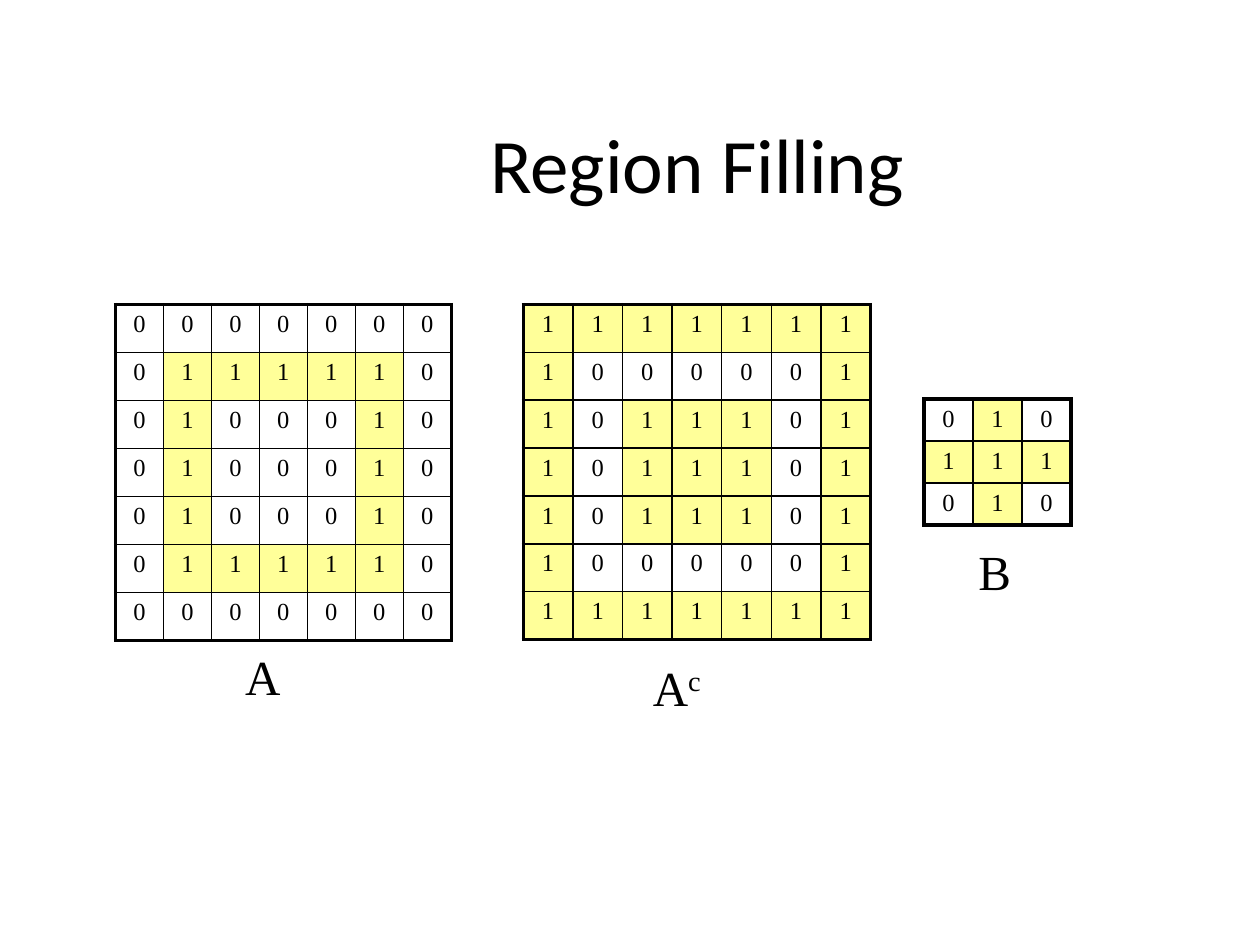
from lxml import etree
from pptx import Presentation
from pptx.dml.color import RGBColor
from pptx.enum.text import MSO_ANCHOR, MSO_AUTO_SIZE, PP_ALIGN
from pptx.oxml.ns import qn
from pptx.util import Pt

CENTER = PP_ALIGN.CENTER
LEFT = PP_ALIGN.LEFT
MIDDLE = MSO_ANCHOR.MIDDLE
GROW = MSO_AUTO_SIZE.SHAPE_TO_FIT_TEXT

BLACK, WHITE, YELLOW = "000000", "FFFFFF", "FFFF99"
TITLE_FONT = {"name": "Calibri", "size": Pt(44)}
CELL_FONT = {"name": "Times New Roman", "size": Pt(14)}
LABEL_FONT = {"name": "Times New Roman", "size": Pt(28)}
OUTER, INNER = 2.25, 1

REGION = ["0000000", "0111110", "0100010", "0100010", "0100010", "0111110", "0000000"]
COMPLEMENT = [row.translate(str.maketrans("01", "10")) for row in REGION]
STRUCTURING_ELEMENT = ["010", "111", "010"]


def color(hex_value):
    return RGBColor.from_string(hex_value)


def format_font(font, values):
    for key, value in values.items():
        setattr(font, key, value)
    font.color.rgb = color(BLACK)


def add_title(slide, box, text):
    frame = slide.shapes.add_textbox(*map(Pt, box)).text_frame
    frame.word_wrap = True
    frame.vertical_anchor = MIDDLE
    heading = frame.paragraphs[0]
    heading.text = text
    heading.alignment = CENTER
    format_font(heading.font, TITLE_FONT)


def add_border(cell, side, width):
    line = etree.SubElement(cell._tc.get_or_add_tcPr(), qn(f"a:ln{side}"), w=str(Pt(width)))
    fill = etree.SubElement(line, qn("a:solidFill"))
    etree.SubElement(fill, qn("a:srgbClr"), val=BLACK)


def add_matrix(slide, box, rows, zero_fill=None):
    row_count, column_count = len(rows), len(rows[0])
    left, top, width, height = box
    matrix = slide.shapes.add_table(row_count, column_count, *map(Pt, box)).table
    matrix.first_row = matrix.horz_banding = False
    for column in matrix.columns:
        column.width = Pt(width / column_count)
    for row in matrix.rows:
        row.height = Pt(height / row_count)

    for r, digits in enumerate(rows):
        for c, digit in enumerate(digits):
            cell = matrix.cell(r, c)
            # Heavy frame around the matrix, thin rules inside
            on_edge = {"L": c == 0, "R": c == column_count - 1,
                       "T": r == 0, "B": r == row_count - 1}
            for side, outside in on_edge.items():
                add_border(cell, side, OUTER if outside else INNER)
            # Ones are highlighted
            fill_color = YELLOW if digit == "1" else zero_fill
            if fill_color:
                cell.fill.solid()
                cell.fill.fore_color.rgb = color(fill_color)
            else:
                cell.fill.background()
            entry = cell.text_frame.paragraphs[0]
            entry.alignment = CENTER
            pixel = entry.add_run()
            pixel.text = digit
            format_font(pixel.font, CELL_FONT)


def add_label(slide, box, letter, superscript=""):
    frame = slide.shapes.add_textbox(*map(Pt, box)).text_frame
    frame.word_wrap = False
    frame.auto_size = GROW
    label = frame.paragraphs[0]
    label.alignment = LEFT
    for text, baseline in ((letter, None), (superscript, "30000")):
        if text:
            run = label.add_run()
            run.text = text
            format_font(run.font, LABEL_FONT)
            if baseline:
                run.font._element.set("baseline", baseline)


def main():
    presentation = Presentation()
    presentation.slide_width, presentation.slide_height = Pt(720), Pt(540)
    slide = presentation.slides.add_slide(presentation.slide_layouts[6])

    add_title(slide, (108, 48, 581, 90), "Region Filling")

    # Region, its complement and the structuring element
    add_matrix(slide, (66, 174, 192, 192), REGION)
    add_matrix(slide, (299, 174, 198.5, 191.5), COMPLEMENT, WHITE)
    add_matrix(slide, (528, 228, 84, 72), STRUCTURING_ELEMENT)

    # Names below the matrices
    add_label(slide, (133, 366, 34.6, 41), "A")
    add_label(slide, (366, 372, 43.2, 41), "A", "c")
    add_label(slide, (552, 306, 33.1, 41), "B")

    presentation.save("out.pptx")


if __name__ == "__main__":
    main()
